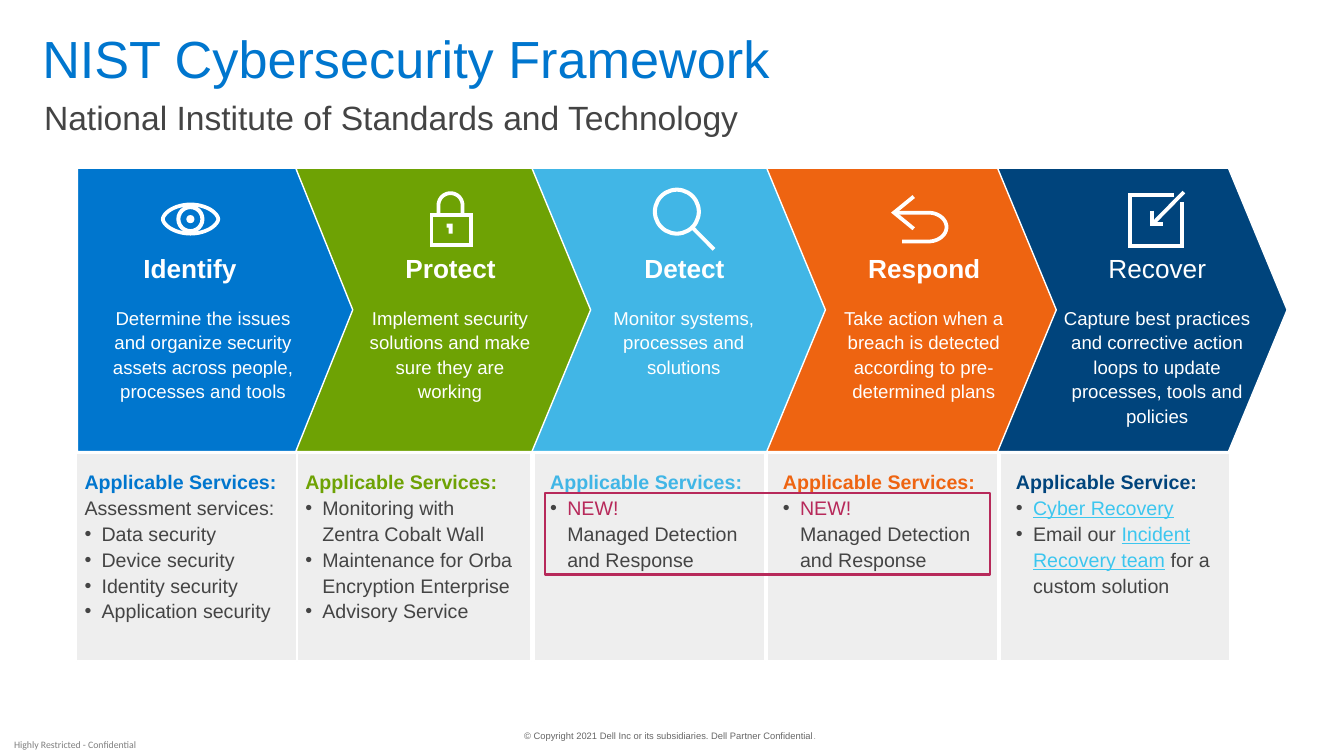
from math import cos, pi, sin

from lxml.etree import SubElement
from pptx import Presentation
from pptx.dml.color import RGBColor
from pptx.enum.shapes import MSO_SHAPE
from pptx.enum.text import MSO_ANCHOR, PP_ALIGN
from pptx.oxml.ns import qn
from pptx.util import Pt

WHITE = RGBColor(0xFF, 0xFF, 0xFF)
BLUE = RGBColor(0x00, 0x76, 0xCE)
GREEN = RGBColor(0x6E, 0xA2, 0x04)
SKY = RGBColor(0x41, 0xB6, 0xE6)
ORANGE = RGBColor(0xEE, 0x64, 0x11)
NAVY = RGBColor(0x00, 0x44, 0x7C)
BERRY = RGBColor(0xB7, 0x29, 0x5A)
CYAN = RGBColor(0x3C, 0xC6, 0xEF)
DARK = RGBColor(0x44, 0x44, 0x44)
PALE = RGBColor(0xEE, 0xEE, 0xEE)
GRAY = RGBColor(0x66, 0x66, 0x66)
MIST = RGBColor(0x7F, 0x7F, 0x7F)

TITLE = "NIST Cybersecurity Framework"
SUB = "National Institute of Standards and Technology"
RIGHTS = "© Copyright 2021 Dell Inc or its subsidiaries. Dell Partner Confidential"
LABEL = "Highly Restricted - Confidential"

# name, colour, blurb
STAGES = [
    ("Identify", BLUE, "Determine the issues and organize security assets across people, processes and tools"),
    ("Protect", GREEN, "Implement security solutions and make sure they are working"),
    ("Detect", SKY, "Monitor systems, processes and solutions"),
    ("Respond", ORANGE, "Take action when a breach is detected according to pre-determined plans"),
    ("Recover", NAVY, "Capture best practices and corrective action loops to update processes, tools and policies"),
]
HEAD = "Applicable Services:"
NEW = [("NEW!\n", BERRY), ("Managed Detection and Response", DARK)]
# heading, plain lead line, bullets (text, or runs of text and colour)
OFFERS = [
    (HEAD, "Assessment services:",
     ["Data security", "Device security", "Identity security", "Application security"]),
    (HEAD, "", ["Monitoring with\nZentra Cobalt Wall",
                "Maintenance for Orba Encryption Enterprise", "Advisory Service"]),
    (HEAD, "", [NEW]),
    (HEAD, "", [NEW]),
    ("Applicable Service:", "",
     [[("Cyber Recovery", CYAN)],
      [("Email our ", DARK), ("Incident Recovery team", CYAN), (" for a custom solution", DARK)]]),
]

# left, width of each column's parts
ARROWS = [(55.4, 196.6), (211.7, 210.2), (379.4, 210.2), (544.3, 210.2), (709.2, 210.2)]
CARDS = [(54.7, 157), (212.4, 167), (381.6, 164.9), (547.9, 164.9), (714.2, 164.2)]
LISTS = [(53.3, 157), (211, 172.8), (385.9, 157), (552.2, 157), (718.6, 164.2)]
BLURBS = [(68.4, 153.4), (254.2, 134.6), (421.2, 134.6), (592.6, 134.6), (747.4, 158.4)]
NAMES = [135.7, 321.8, 488.9, 660.2, 826.6]  # centres
SPAN = 120  # width of a stage name


def arc(x, y, rx, ry, start, end):
    """Points along an ellipse, angles in degrees."""
    turns = [(start + (end - start) * i / 24) * pi / 180 for i in range(25)]
    return [(x + rx * cos(t), y + ry * sin(t)) for t in turns]


EYE = [(136.1 - 19.8 * cos(pi * i / 24), 156.5 - 10.4 * sin(pi * i / 24) ** 1.2)
       for i in range(25)]
EYE += [(x, 313 - y) for x, y in EYE[-2:0:-1]]

# points, closed
STROKES = [
    (EYE, True),
    ([(308.2, 153.4), (336.2, 153.4), (336.2, 175.2), (308.2, 175.2)], True),
    ([(313.2, 153)] + arc(321.8, 146.6, 8.6, 8.6, 180, 360) + [(330.4, 153)], False),
    ([(495, 163), (510, 178.2)], False),
    ([(652.7, 140.4), (638.6, 151.9), (652.7, 163.4)], False),
    ([(640, 151.9)] + arc(663.1, 162.2, 13, 10.3, -90, 90) + [(644.4, 172.5)], False),
    ([(838.8, 139), (807.1, 139), (807.1, 175.7), (844.2, 175.7), (844.2, 144)], False),
    ([(823, 150.5), (823, 160.2), (831, 160.2)], False),
    ([(845.6, 137.2), (823.7, 159.5)], False),
]
KEY = [(320.4, 167), (323.3, 167), (323.3, 159.8), (319, 159.8), (319, 162.7), (320.4, 162.7)]
RINGS = [(136, 156.5, 8.6), (483.5, 151.2, 15.7)]  # centre, radius


def put(obj, **vals):
    for key, val in vals.items():
        setattr(obj, key, val)


def paint(shape, fill=None, line=None, width=1):
    shape.shadow.inherit = False
    for part, hue in ((shape.fill, fill), (shape.line.fill, line)):
        if hue is None:
            part.background()
        else:
            part.solid()
            part.fore_color.rgb = hue
    if line is not None:
        shape.line.width = Pt(width)


def shape(kind, x, y, w, h, **look):
    item = slide.shapes.add_shape(kind, Pt(x), Pt(y), Pt(w), Pt(h))
    paint(item, **look)
    return item


def trace(dots, closed, **look):
    """Draw an outline through the dots."""
    dots = [(Pt(x), Pt(y)) for x, y in dots]
    pen = slide.shapes.build_freeform(*dots[0])
    pen.add_line_segments(dots[1:], close=closed)
    item = pen.convert_to_shape()
    paint(item, **look)
    if look.get("line") is not None:
        SubElement(item.line._get_or_add_ln(), qn("a:miter"), lim="800000")


def box(x, y, w, h, wrap=True, pad=True, anchor=MSO_ANCHOR.TOP):
    frame = slide.shapes.add_textbox(Pt(x), Pt(y), Pt(w), Pt(h)).text_frame
    put(frame, word_wrap=wrap, vertical_anchor=anchor)
    if not pad:
        strip(frame)
    return frame


def strip(frame):
    put(frame, margin_left=0, margin_right=0, margin_top=0, margin_bottom=0)


def write(para, text, size, hue, face="Arial", **more):
    """Add a run, with a line break for each newline."""
    for i, part in enumerate(text.split("\n")):
        if i:
            para.add_line_break()
        if part:
            run = para.add_run()
            run.text = part
            put(run.font, size=Pt(size), name=face, **more)
            run.font.color.rgb = hue


def bullet(para):
    props = para._p.get_or_add_pPr()
    props.set("marL", str(Pt(12.2)))
    props.set("indent", str(Pt(-12.2)))
    tint = SubElement(props, qn("a:buClr"))
    SubElement(tint, qn("a:srgbClr"), val=str(DARK))
    SubElement(props, qn("a:buFont"), typeface="Arial")
    SubElement(props, qn("a:buChar"), char="•")


def offer(spot, hue, head, lead, items):
    """Write one list of services."""
    frame = box(*spot)
    para = frame.paragraphs[0]
    para.line_spacing = 1.1
    write(para, head, 14, hue, bold=True)
    for item in ([lead] if lead else []) + items:
        para = frame.add_paragraph()
        para.line_spacing = 1.1
        if item != lead:
            bullet(para)
        for text, tone in [(item, DARK)] if isinstance(item, str) else item:
            write(para, text, 14, tone, underline=tone == CYAN)


deck = Presentation()
put(deck, slide_width=Pt(960), slide_height=Pt(540))
slide = deck.slides.add_slide(deck.slide_layouts[5])

title = slide.shapes.title
put(title, left=Pt(30.2), top=Pt(23.8), width=Pt(900), height=Pt(41))
strip(title.text_frame)
title.text_frame.vertical_anchor = MSO_ANCHOR.TOP
para = title.text_frame.paragraphs[0]
put(para, alignment=PP_ALIGN.LEFT, line_spacing=0.9)
write(para, TITLE, 37.3, BLUE)

para = box(27.4, 69.1, 504, 28.8, wrap=False, pad=False).paragraphs[0]
para.alignment = PP_ALIGN.CENTER
write(para, SUB, 24, DARK)

for x, w in reversed(CARDS):
    shape(MSO_SHAPE.RECTANGLE, x, 324, w, 148.3, fill=PALE, line=WHITE)
for (x, w), stage in reversed(list(zip(ARROWS, STAGES))):
    arrow = shape(MSO_SHAPE.PENTAGON, x, 120.2, w, 202.3, fill=stage[1], line=WHITE)
    arrow.adjustments[0] = 0.207

for (name, hue, blurb), mid, (x, w), (left, wide), parts in zip(
        STAGES, NAMES, BLURBS, LISTS, OFFERS):
    para = box(mid - SPAN / 2, 176.4, SPAN, 30, wrap=False).paragraphs[0]
    para.alignment = PP_ALIGN.CENTER
    write(para, name, 18.7, WHITE, bold=name != "Recover")
    para = box(x, 213.8, w, 77).paragraphs[0]
    put(para, alignment=PP_ALIGN.CENTER, line_spacing=1.1)
    write(para, blurb, 13.3, WHITE)
    offer((left, 330.5, wide, 118), hue, *parts)

for dots, closed in STROKES:
    trace(dots, closed, line=WHITE, width=2.7)
trace(KEY, True, fill=WHITE)
for x, y, r in RINGS:
    shape(MSO_SHAPE.OVAL, x - r, y - r, 2 * r, 2 * r, line=WHITE, width=2.9)
shape(MSO_SHAPE.OVAL, 133.1, 153.6, 5.8, 5.8, fill=WHITE)
shape(MSO_SHAPE.RECTANGLE, 389.5, 352.1, 317.5, 58.3, line=BERRY, width=1.5)

para = box(374.4, 522.7, 211, 7.2, wrap=False, pad=False, anchor=MSO_ANCHOR.MIDDLE).paragraphs[0]
para.line_spacing = 0.9
write(para, RIGHTS, 6.7, GRAY)
write(para, ".", 5, GRAY)
para = box(0, 523.4, 107.3, 16.6, pad=False, anchor=MSO_ANCHOR.MIDDLE).paragraphs[0]
para.alignment = PP_ALIGN.CENTER
write(para, LABEL, 7, MIST, face="Calibri")

deck.save("out.pptx")
